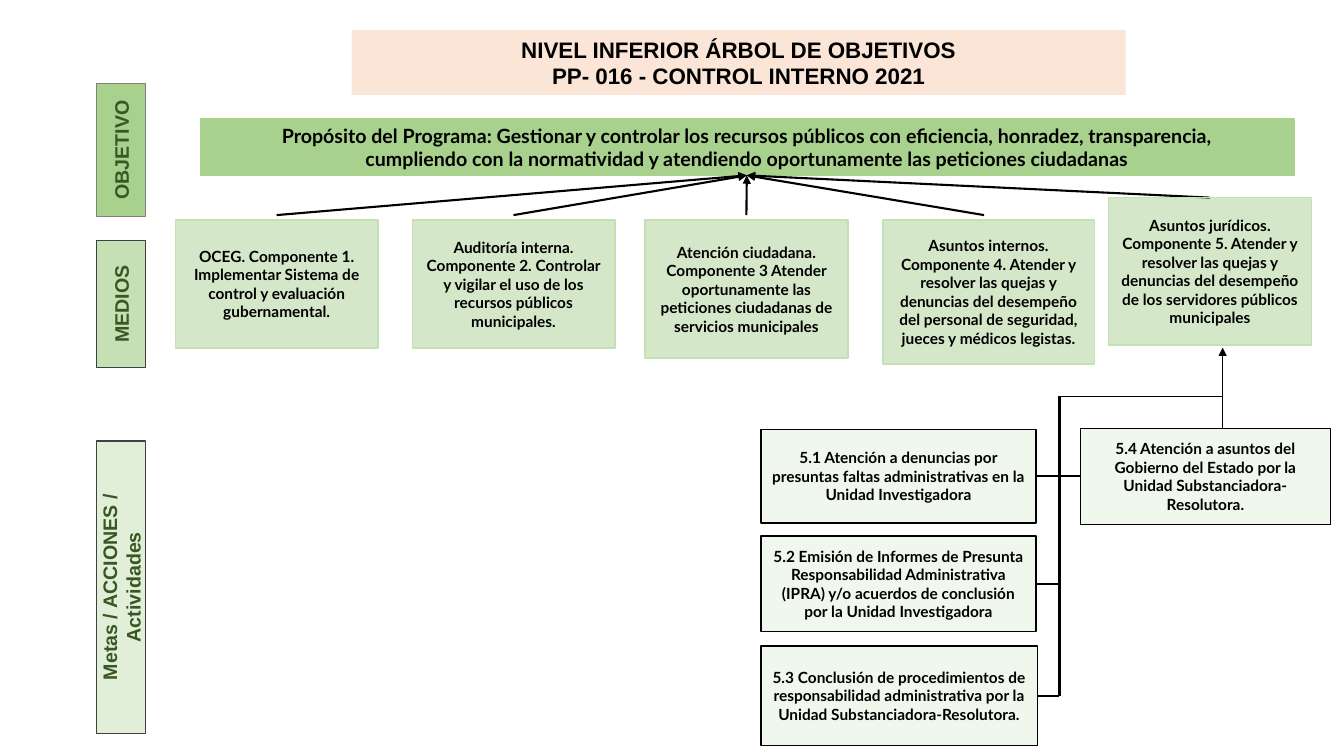
from pptx import Presentation
from pptx.util import Cm, Pt
from pptx.dml.color import RGBColor
from pptx.enum import shapes as sh, text as tx
from pptx.oxml.ns import qn
from lxml import etree

# Colours
BLACK = RGBColor(0, 0, 0)
PEACH = RGBColor(0xFB, 0xE5, 0xD6)
GREEN = RGBColor(0xA9, 0xD1, 0x8E)
LIGHT = RGBColor(0xC5, 0xE0, 0xB4)
LEAF = RGBColor(0x70, 0xAD, 0x47)
DARK = RGBColor(0x38, 0x57, 0x23)
GREY = RGBColor(0x80, 0x80, 0x80)
COAL = RGBColor(0x40, 0x40, 0x40)

# Content (lengths in cm)
TITLE = ["NIVEL INFERIOR ÁRBOL DE OBJETIVOS", "PP- 016 - CONTROL INTERNO 2021"]
PURPOSE = [
    "Propósito del Programa: Gestionar y controlar los recursos públicos "
    "con eficiencia, honradez, transparencia,",
    "cumpliendo con la normatividad y atendiendo oportunamente "
    "las peticiones ciudadanas",
]
LEVELS = [  # text, top, length, fill, opacity, line
    ("OBJETIVO", 2.1, 3.35, GREEN, 100, GREY),
    ("MEDIOS", 6.06, 3.2, LIGHT, 100, COAL),
    ("Metas / ACCIONES / Actividades", 11.11, 7.37, LIGHT, 50, COAL),
]
PARTS = [  # text, left, top, width, height, gap under the arrow
    ("OCEG. Componente 1. Implementar Sistema de control y evaluación "
     "gubernamental.", 4.42, 5.54, 5.11, 3.23, 0.12),
    ("Auditoría interna. Componente 2. Controlar y vigilar el uso de los "
     "recursos públicos municipales.", 10.39, 5.54, 5.11, 3.23, 0.12),
    ("Atención ciudadana. Componente 3 Atender oportunamente las peticiones "
     "ciudadanas de servicios municipales", 16.26, 5.54, 5.11, 3.48, 0.12),
    ("Asuntos internos. Componente 4. Atender y resolver las quejas y "
     "denuncias del desempeño del personal de seguridad, jueces y médicos "
     "legistas.", 22.25, 5.54, 5.33, 3.63, 0.12),
    ("Asuntos jurídicos. Componente 5. Atender y resolver las quejas y "
     "denuncias del desempeño de los servidores públicos municipales",
     27.94, 4.98, 5.11, 3.71, 0),
]
TASKS = [  # text, left, top, width, height, end of its branch
    ("5.1 Atención a denuncias por presuntas faltas administrativas en la "
     "Unidad Investigadora", 19.18, 10.82, 6.93, 2.36, 27.23),
    ("5.2 Emisión de Informes de Presunta Responsabilidad Administrativa "
     "(IPRA) y/o acuerdos de conclusión por la Unidad Investigadora",
     19.18, 13.51, 6.93, 2.41, 26.7),
    ("5.3 Conclusión de procedimientos de responsabilidad administrativa por "
     "la Unidad Substanciadora-Resolutora.", 19.18, 16.28, 6.96, 2.51, 26.7),
    ("5.4 Atención a asuntos del Gobierno del Estado por la Unidad "
     "Substanciadora-Resolutora.", 27.23, 10.8, 6.3, 2.41, None),
]
HUB = (18.82, 4.42)
TRUNK, TURN, RISE = 26.7, 9.98, 30.81

# Text formats
HEAD = dict(name="Arial", size=Pt(16), bold=True)
LABEL = dict(name="Arial", size=Pt(14), bold=True)
LEAD = dict(name="Lato", size=Pt(14), bold=True)
BODY = dict(name="Lato", size=Pt(11), bold=True)

prs = Presentation()
prs.slide_width, prs.slide_height = Cm(33.87), Cm(19.05)
slide = prs.slides.add_slide(prs.slide_layouts[5])


def write(shape, lines, form, color=BLACK):
    frame = shape.text_frame
    frame.word_wrap = True
    frame.vertical_anchor = tx.MSO_ANCHOR.MIDDLE
    frame.text = "\n".join(lines)
    for para in frame.paragraphs:
        para.alignment = tx.PP_ALIGN.CENTER
        font = para.runs[0].font
        for key, value in form.items():
            setattr(font, key, value)
        font.color.rgb = color


def paint(shape, color, alpha=100):
    shape.fill.solid()
    shape.fill.fore_color.rgb = color
    if alpha < 100:
        tint = shape.fill._xPr.find(".//" + qn("a:srgbClr"))
        etree.SubElement(tint, qn("a:alpha"), val=str(alpha * 1000))


def box(left, top, width, height, color, alpha, edge):
    shape = slide.shapes.add_shape(
        sh.MSO_SHAPE.FLOWCHART_PROCESS,
        Cm(left), Cm(top), Cm(width), Cm(height))
    shape.shadow.inherit = False
    paint(shape, color, alpha)
    shape.line.color.rgb = edge
    shape.line.width = Pt(1)
    return shape


def link(start, end, width=1.5, arrow=False):
    line = slide.shapes.add_connector(
        sh.MSO_CONNECTOR.STRAIGHT, *(Cm(v) for v in (*start, *end)))
    line.line.color.rgb = BLACK
    line.line.width = Pt(width)
    if arrow:
        etree.SubElement(line.line._get_or_add_ln(), qn("a:tailEnd"),
                         type="triangle")
    etree.SubElement(line._element.spPr, qn("a:effectLst"))


# Title
title = slide.shapes.title
title.left, title.top, title.width, title.height = (
    Cm(v) for v in (8.86, 0.76, 19.51, 1.63))
paint(title, PEACH)
write(title, TITLE, HEAD)

# Level labels, turned to read upwards
AXIS, THICK = 3.05, 1.24
for name, top, size, color, alpha, edge in LEVELS:
    label = box(AXIS - size / 2, top + (size - THICK) / 2, size, THICK,
                color, alpha, edge)
    label.rotation = 270
    write(label, [name], LABEL, DARK)

# Purpose
write(box(5.05, 3, 27.56, 1.42, GREEN, 100, GREEN), PURPOSE, LEAD)

# Components and their arrows to the purpose
for words, left, top, width, height, gap in PARTS:
    link((left + 2.55, top - gap), HUB, arrow=True)
    write(box(left, top, width, height, LEAF, 29, LIGHT), [words], BODY)

# Activities and their branches to the trunk
for words, left, top, width, height, end in TASKS:
    write(box(left, top, width, height, LIGHT, 25, BLACK), [words], BODY)
    if end:
        mid = top + height / 2
        link((end, mid), (left + width, mid))
link((TRUNK, TURN), (TRUNK, 17.53))

# Thin path up to component 5
link((TRUNK, TURN), (RISE, TURN), 0.5)
link((RISE, 10.8), (RISE, TURN), 0.5)
link((RISE, TURN), (RISE, 8.76), 0.5, arrow=True)

prs.save("out.pptx")
